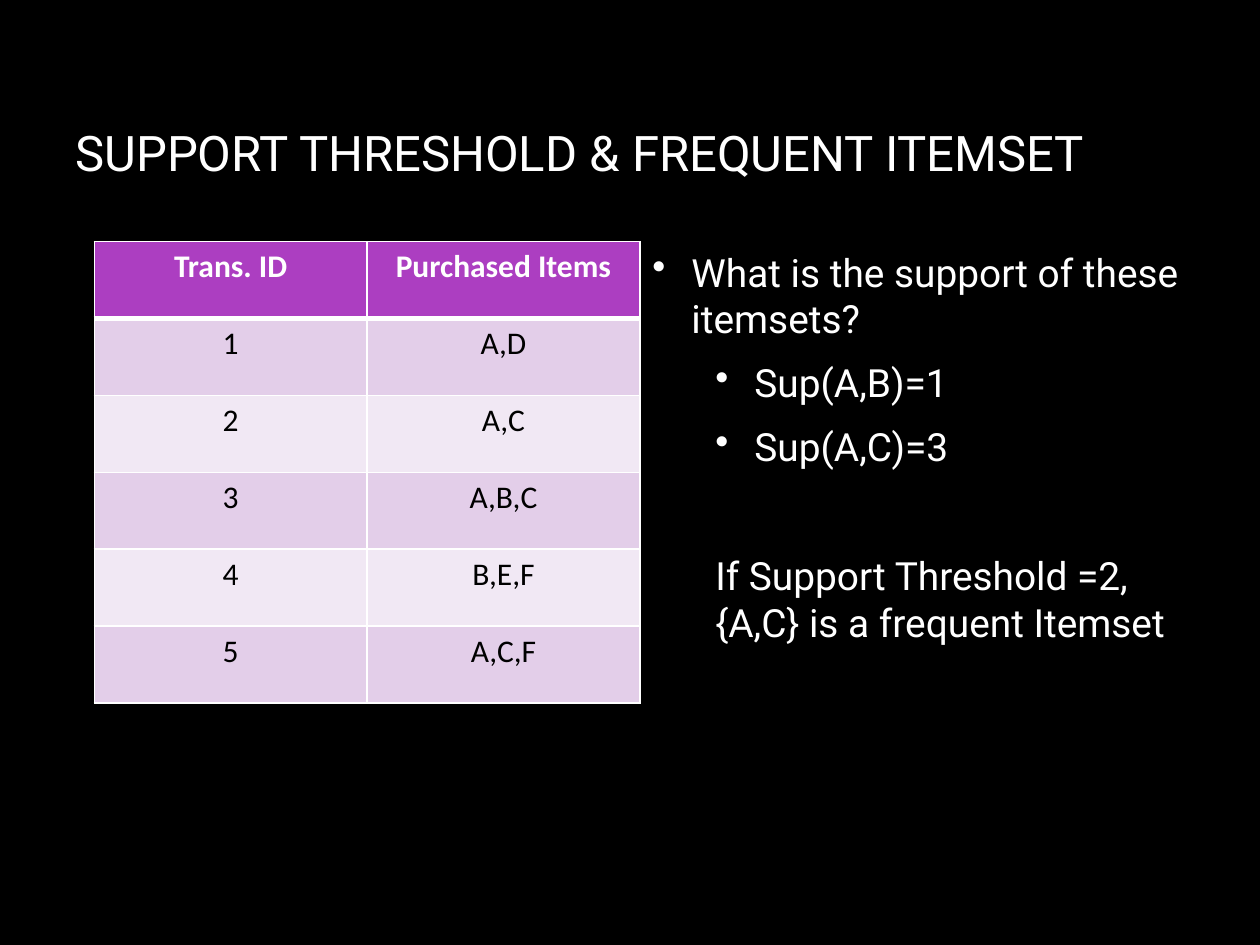
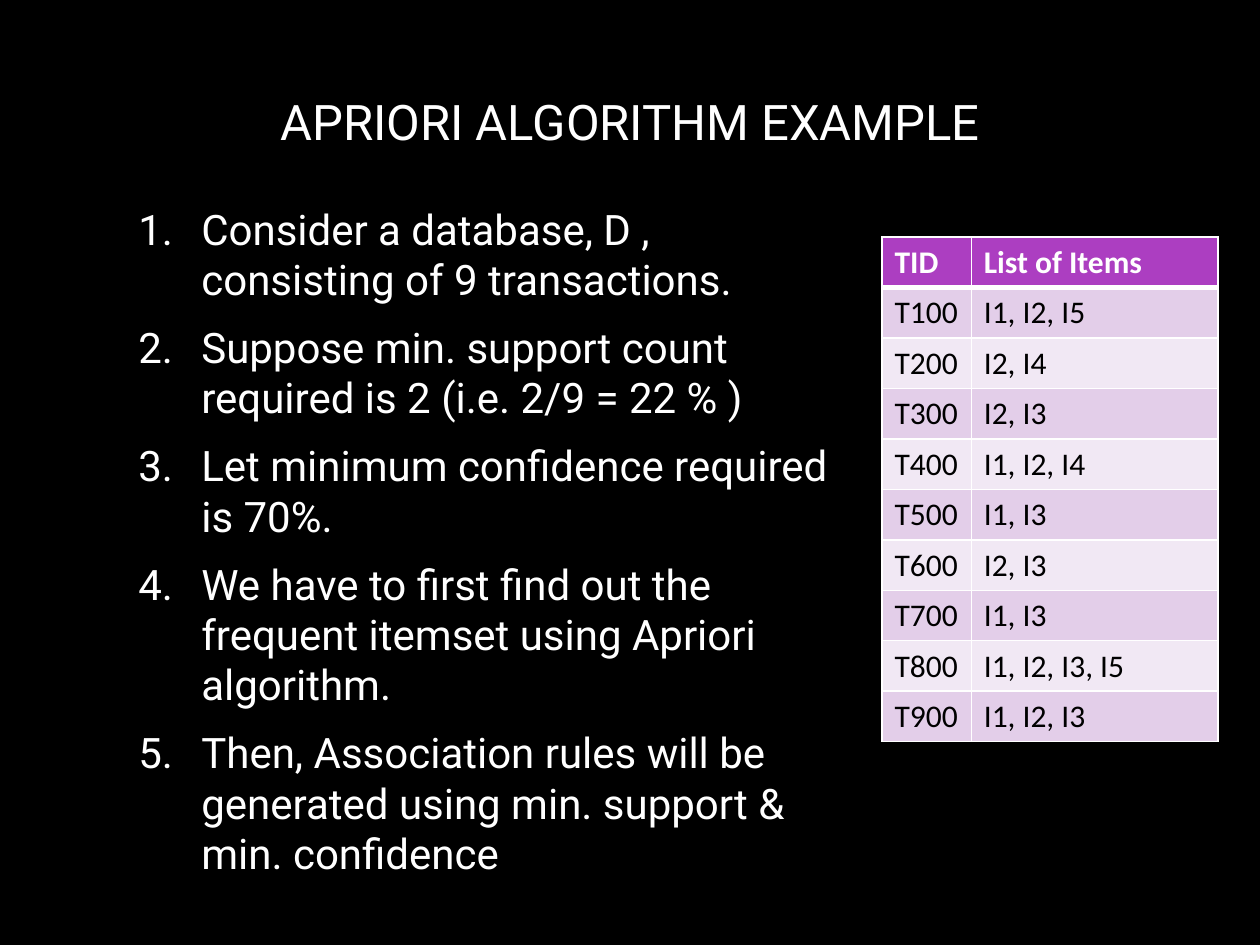
from dataclasses import dataclass

import pptx
import pptx.dml.color
import pptx.enum.text
import pptx.oxml.ns
import pptx.util
from lxml import etree

Cm = pptx.util.Cm
Pt = pptx.util.Pt
Align = pptx.enum.text.PP_ALIGN
Anchor = pptx.enum.text.MSO_ANCHOR


@dataclass(frozen=True)
class Theme:
    background: str = "000000"
    light: str = "FFFFFF"
    dark: str = "000000"
    header: str = "AC3EC1"
    bands: tuple[str, str] = ("E3CEE9", "F1E8F4")
    text_font: str = "Roboto"
    table_font: str = "Calibri"
    title_size: float = 28
    question_size: float = 22.2
    step_size: float = 24
    table_size: float = 18
    space_after: float = 10
    rule: float = 1
    header_rule: float = 3


THEME = Theme()


@dataclass(frozen=True)
class Box:
    """Position and size in centimetres."""
    left: float
    top: float
    width: float
    height: float


@dataclass(frozen=True)
class Item:
    """One paragraph; indents are in centimetres."""
    text: str
    level: int = 0
    indent: float = 0
    hanging: float = 0
    bullet: str = ""
    numbered: bool = False
    before: float = 0


@dataclass(frozen=True)
class Grid:
    left: float
    top: float
    columns: tuple[float, ...]
    row_height: float
    rows: tuple[tuple[str, ...], ...]
    align: Align = Align.LEFT


def rgb(value: str) -> pptx.dml.color.RGBColor:
    return pptx.dml.color.RGBColor.from_string(value)


def add_xml(parent, tag: str, **attributes: str):
    child = etree.SubElement(parent, pptx.oxml.ns.qn(tag))
    for name, value in attributes.items():
        child.set(name, value)
    return child


def write(paragraph, text: str, *, size: float, font: str = THEME.text_font,
          color: str = THEME.light, bold: bool = False,
          align: Align = Align.LEFT) -> None:
    paragraph.alignment = align
    run = paragraph.add_run()
    run.text = text
    run.font.name = font
    run.font.size = Pt(size)
    run.font.bold = bold
    run.font.color.rgb = rgb(color)


def add_frame(slide, box: Box, anchor: Anchor):
    area = slide.shapes.add_textbox(Cm(box.left), Cm(box.top),
                                    Cm(box.width), Cm(box.height))
    area.text_frame.word_wrap = True
    area.text_frame.vertical_anchor = anchor
    return area.text_frame


def add_titled_slide(deck, title: str, box: Box, align: Align = Align.LEFT):
    slide = deck.slides.add_slide(deck.slide_layouts[6])
    slide.background.fill.solid()
    slide.background.fill.fore_color.rgb = rgb(THEME.background)
    frame = add_frame(slide, box, Anchor.MIDDLE)
    write(frame.paragraphs[0], title, size=THEME.title_size, align=align)
    return slide


def add_list(slide, box: Box, items: list[Item], size: float,
             anchor: Anchor = Anchor.MIDDLE) -> None:
    frame = add_frame(slide, box, anchor)
    for index, item in enumerate(items):
        paragraph = frame.add_paragraph() if index else frame.paragraphs[0]
        write(paragraph, item.text, size=size)
        paragraph.level = item.level
        paragraph.space_before = Pt(item.before)
        paragraph.space_after = Pt(THEME.space_after)
        # Indents and bullets
        properties = paragraph._p.get_or_add_pPr()
        properties.set("marL", str(Cm(item.indent)))
        properties.set("indent", str(-Cm(item.hanging)))
        if item.bullet or item.numbered:
            add_xml(add_xml(properties, "a:buClr"), "a:srgbClr", val=THEME.light)
        if item.numbered:
            add_xml(properties, "a:buAutoNum", type="arabicPeriod")
        elif item.bullet:
            add_xml(properties, "a:buChar", char=item.bullet)
        else:
            add_xml(properties, "a:buNone")


def style_cell(cell, fill: str, top: float, bottom: float) -> None:
    properties = cell._tc.get_or_add_tcPr()
    edges = {"a:lnL": THEME.rule, "a:lnR": THEME.rule,
             "a:lnT": top, "a:lnB": bottom}
    for tag, width in edges.items():
        line = add_xml(properties, tag, w=str(Pt(width)))
        add_xml(add_xml(line, "a:solidFill"), "a:srgbClr", val=THEME.light)
    cell.fill.solid()
    cell.fill.fore_color.rgb = rgb(fill)


def add_grid(slide, grid: Grid) -> None:
    table = slide.shapes.add_table(
        len(grid.rows), len(grid.columns), Cm(grid.left), Cm(grid.top),
        Cm(sum(grid.columns)), Cm(grid.row_height * len(grid.rows))).table
    for column, width in zip(table.columns, grid.columns):
        column.width = Cm(width)
    for r, values in enumerate(grid.rows):
        table.rows[r].height = Cm(grid.row_height)
        is_header = r == 0
        fill = THEME.header if is_header else THEME.bands[(r - 1) % 2]
        top = THEME.header_rule if r == 1 else THEME.rule
        bottom = THEME.header_rule if is_header else THEME.rule
        for c, value in enumerate(values):
            cell = table.cell(r, c)
            style_cell(cell, fill, top, bottom)
            write(cell.text_frame.paragraphs[0], value, size=THEME.table_size,
                  font=THEME.table_font, bold=is_header, align=grid.align,
                  color=THEME.light if is_header else THEME.dark)


def build_support_slide(deck) -> None:
    slide = add_titled_slide(deck, "SUPPORT THRESHOLD & FREQUENT ITEMSET",
                             Box(1.27, 1.7, 23.29, 2.74))
    # Questions and conclusion
    questions = [Item("What is the support of these itemsets?",
                      indent=0.79, hanging=0.79, bullet="•")]
    questions += [Item(text, level=1, indent=2.06, hanging=0.79, bullet="•")
                  for text in ("Sup(A,B)=1", "Sup(A,C)=3")]
    questions.append(Item("If Support Threshold =2, {A,C} is a frequent Itemset",
                          level=1, indent=1.27, before=37))
    add_list(slide, Box(12.9, 4.88, 11.63, 9.32), questions,
             THEME.question_size, Anchor.TOP)
    # Transactions
    purchases = ("A,D", "A,C", "A,B,C", "B,E,F", "A,C,F")
    rows = (("Trans. ID", "Purchased Items"),
            *((str(n), items) for n, items in enumerate(purchases, 1)))
    add_grid(slide, Grid(1.9, 4.87, (5.5, 5.5), 1.55, rows, Align.CENTER))


def build_apriori_slide(deck) -> None:
    slide = add_titled_slide(deck, "APRIORI ALGORITHM EXAMPLE",
                             Box(1.27, 0.85, 22.86, 3.18), Align.CENTER)
    # Steps
    steps = (
        "Consider a database, D , consisting of 9 transactions.",
        "Suppose min. support count required is 2 (i.e. 2/9 = 22 % )",
        "Let minimum confidence required is 70%.",
        "We have to first find out the frequent itemset using Apriori algorithm.",
        "Then, Association rules will be generated using min. support & "
        "min. confidence",
    )
    add_list(slide, Box(1.27, 3.6, 16.09, 14.6),
             [Item(step, level=1, indent=2.54, hanging=1.27, numbered=True)
              for step in steps], THEME.step_size)
    # Transactions
    baskets = ("I1, I2, I5", "I2, I4", "I2, I3", "I1, I2, I4", "I1, I3",
               "I2, I3", "I1, I3", "I1, I2, I3, I5", "I1, I2, I3")
    rows = (("TID", "List of Items"),
            *((f"T{n}00", items) for n, items in enumerate(baskets, 1)))
    add_grid(slide, Grid(17.78, 4.78, (1.8, 4.97), 1, rows))


def main() -> None:
    deck = pptx.Presentation()
    deck.slide_width, deck.slide_height = Cm(25.4), Cm(19.05)
    build_support_slide(deck)
    build_apriori_slide(deck)
    deck.save("out.pptx")


if __name__ == "__main__":
    main()
